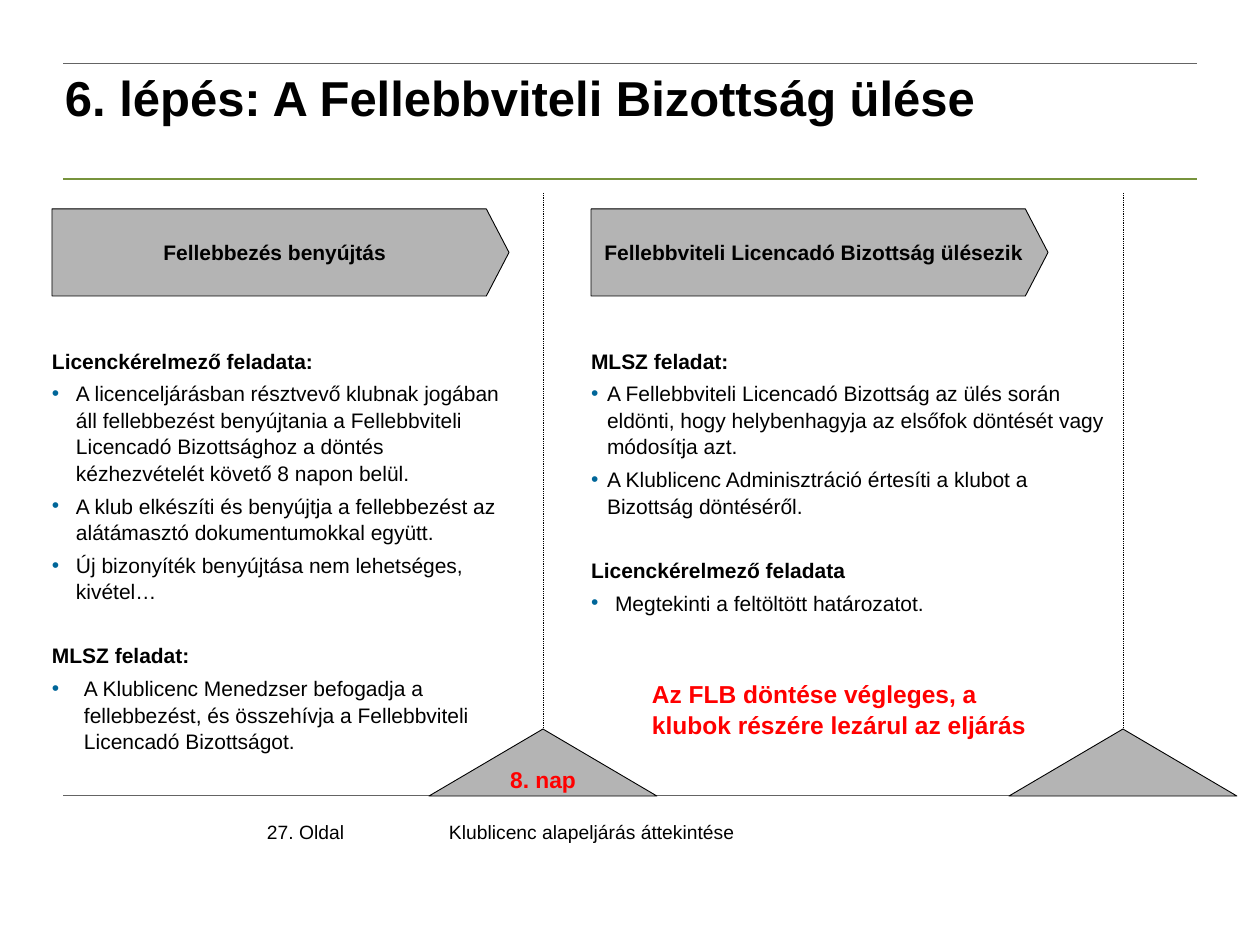
from dataclasses import dataclass

from lxml import etree
from pptx import Presentation
from pptx import util as u
from pptx.dml.color import RGBColor
from pptx.enum import dml, shapes, text
from pptx.oxml.ns import qn

EMU_PER_PX = 914400 / 126


@dataclass(frozen=True)
class Theme:
    font: str = "Arial"
    ink: str = "000000"
    alert: str = "FF0000"
    bullet: str = "006699"
    panel: str = "B4B4B4"
    rule: str = "646464"
    accent: str = "77933C"
    title: int = 28
    notice: int = 14
    day: int = 13
    body: int = 12
    footer: int = 11


THEME = Theme()


def px(length):
    return u.Emu(round(length * EMU_PER_PX))


def apply(target, values):
    for name, value in values.items():
        setattr(target, name, value)


def place(shape, box):
    apply(shape, dict(zip(("left", "top", "width", "height"), map(px, box))))


def set_frame(frame, inset=0, wrap=True, anchor=text.MSO_ANCHOR.TOP):
    margins = {f"margin_{side}": px(inset) for side in ("left", "top", "right", "bottom")}
    apply(frame, {**margins, "word_wrap": wrap, "vertical_anchor": anchor,
                  "auto_size": text.MSO_AUTO_SIZE.NONE})


def write(paragraph, words, size, bold=False, color=THEME.ink, **layout):
    paragraph.text = words
    apply(paragraph, layout)
    font = paragraph.runs[0].font
    apply(font, {"name": THEME.font, "size": u.Pt(size), "bold": bold})
    font.color.rgb = RGBColor.from_string(color)


def set_bullet(paragraph, indent):
    """Hang a coloured bullet; an indent of zero means a plain heading."""
    props = paragraph._p.get_or_add_pPr()
    props.set("marL", str(px(indent)))
    props.set("indent", str(px(-indent)))
    if not indent:
        etree.SubElement(props, qn("a:buNone"))
        return
    color = etree.SubElement(props, qn("a:buClr"))
    etree.SubElement(color, qn("a:srgbClr"), val=THEME.bullet)
    etree.SubElement(props, qn("a:buFont"), typeface=THEME.font)
    etree.SubElement(props, qn("a:buChar"), char="•")


def add_line(slide, start, end, color, width, dash=None):
    line = slide.shapes.add_connector(
        shapes.MSO_CONNECTOR.STRAIGHT, *map(px, start + end))
    line.line.color.rgb = RGBColor.from_string(color)
    apply(line.line, {"width": u.Pt(width), "dash_style": dash})
    etree.SubElement(line._element.spPr, qn("a:effectLst"))


def add_panel(slide, preset, box):
    panel = slide.shapes.add_shape(preset, *map(px, box))
    panel.shadow.inherit = False
    panel.fill.solid()
    panel.fill.fore_color.rgb = RGBColor.from_string(THEME.panel)
    panel.line.color.rgb = RGBColor.from_string(THEME.ink)
    panel.line.width = u.Pt(0.5)
    return panel


def add_label(slide, box, words, size, **style):
    label = slide.shapes.add_textbox(*map(px, box))
    set_frame(label.text_frame)
    write(label.text_frame.paragraphs[0], words, size, **style)


def add_header(slide, box, words):
    """Title between the upper grey rule and the green rule."""
    left, top, width, height = box
    add_line(slide, (left, top), (left + width, top), THEME.rule, 0.5)
    add_line(slide, (left, top + height), (left + width, top + height), THEME.accent, 1)
    title = slide.shapes.title
    place(title, (left - 10, top - 8, width + 10, 72))
    set_frame(title.text_frame, inset=12)
    write(title.text_frame.paragraphs[0], words, THEME.title, bold=True,
          alignment=text.PP_ALIGN.LEFT)


def add_footer(slide, box, page, subject):
    """Bottom rule with the page number and the subject under it."""
    left, top, width, height = box
    add_line(slide, (left, top), (left + width, top), THEME.rule, 0.25)
    add_label(slide, (left + 204, top + 25, 92, height), page, THEME.footer)
    add_label(slide, (left + 386, top + 25, 432, height), subject, THEME.footer)


def fill_tasks(body, box, tasks):
    """Task list of (indent, words); indent zero is a bold heading."""
    place(body, box)
    set_frame(body.text_frame)
    for index, (indent, words) in enumerate(tasks):
        paragraph = body.text_frame.paragraphs[0] if not index else body.text_frame.add_paragraph()
        gap = 18 if index and not indent else 0
        apply(paragraph, {"line_spacing": 1.05, "space_before": u.Pt(gap),
                          "space_after": u.Pt(3.6)})
        set_bullet(paragraph, indent)
        write(paragraph, words, THEME.body, bold=not indent)


def add_stage(slide, box, body, step, tasks, day=""):
    """Step arrow, its tasks, and the deadline marker at the right edge."""
    left, top, width, height = box
    right, bottom = left + width, top + height

    # Step arrow
    arrow = add_panel(slide, shapes.MSO_SHAPE.PENTAGON, (left, top + 16, 457, 87))
    arrow.adjustments[0] = 0.26
    set_frame(arrow.text_frame, inset=6, wrap=False, anchor=text.MSO_ANCHOR.MIDDLE)
    write(arrow.text_frame.paragraphs[0], step, THEME.body, bold=True,
          alignment=text.PP_ALIGN.CENTER)

    # Tasks
    fill_tasks(body, (left, top + 154, width - 5 if not day else width - 40, 365), tasks)

    # Deadline marker
    add_line(slide, (right, top), (right, bottom - 67), THEME.ink, 0.5,
             dml.MSO_LINE.ROUND_DOT)
    marker = add_panel(slide, shapes.MSO_SHAPE.ISOSCELES_TRIANGLE,
                       (right - 114, bottom - 67, 228, 67))
    if day:
        set_frame(marker.text_frame, inset=6, anchor=text.MSO_ANCHOR.MIDDLE)
        write(marker.text_frame.paragraphs[0], day, THEME.day, bold=True,
              color=THEME.alert, alignment=text.PP_ALIGN.CENTER)


APPEAL_TASKS = [
    (0, "Licenckérelmező feladata:"),
    (24, "A licenceljárásban résztvevő klubnak jogában áll fellebbezést benyújtania a "
         "Fellebbviteli Licencadó Bizottsághoz a döntés kézhezvételét követő 8 napon belül."),
    (24, "A klub elkészíti és benyújtja a fellebbezést az alátámasztó dokumentumokkal együtt."),
    (24, "Új bizonyíték benyújtása nem lehetséges, kivétel…"),
    (0, "MLSZ feladat:"),
    (32, "A Klublicenc Menedzser befogadja a fellebbezést, és összehívja a Fellebbviteli "
         "Licencadó Bizottságot."),
]
SESSION_TASKS = [
    (0, "MLSZ feladat:"),
    (16, "A Fellebbviteli Licencadó Bizottság az ülés során eldönti, hogy helybenhagyja az "
         "elsőfok döntését vagy módosítja azt."),
    (16, "A Klublicenc Adminisztráció értesíti a klubot a Bizottság döntéséről."),
    (0, "Licenckérelmező feladata"),
    (24, "Megtekinti a feltöltött határozatot."),
]


def main():
    deck = Presentation()
    apply(deck, {"slide_width": px(1260), "slide_height": px(945)})
    slide = deck.slides.add_slide(deck.slide_layouts[3])
    appeal_body, session_body = slide.placeholders[1], slide.placeholders[2]

    add_header(slide, (63, 63, 1134, 116), "6. lépés: A Fellebbviteli Bizottság ülése")
    add_footer(slide, (63, 795, 1134, 28), "27. Oldal", "Klublicenc alapeljárás áttekintése")
    add_stage(slide, (52, 193, 491, 603), appeal_body, "Fellebbezés benyújtás",
              APPEAL_TASKS, day="8. nap")
    add_stage(slide, (591, 193, 532, 603), session_body,
              "Fellebbviteli Licencadó Bizottság ülésezik", SESSION_TASKS)
    add_label(slide, (652, 678, 383, 87),
              "Az FLB döntése végleges, a klubok részére lezárul az eljárás",
              THEME.notice, bold=True, color=THEME.alert, line_spacing=1.05)
    deck.save("out.pptx")


if __name__ == "__main__":
    main()
